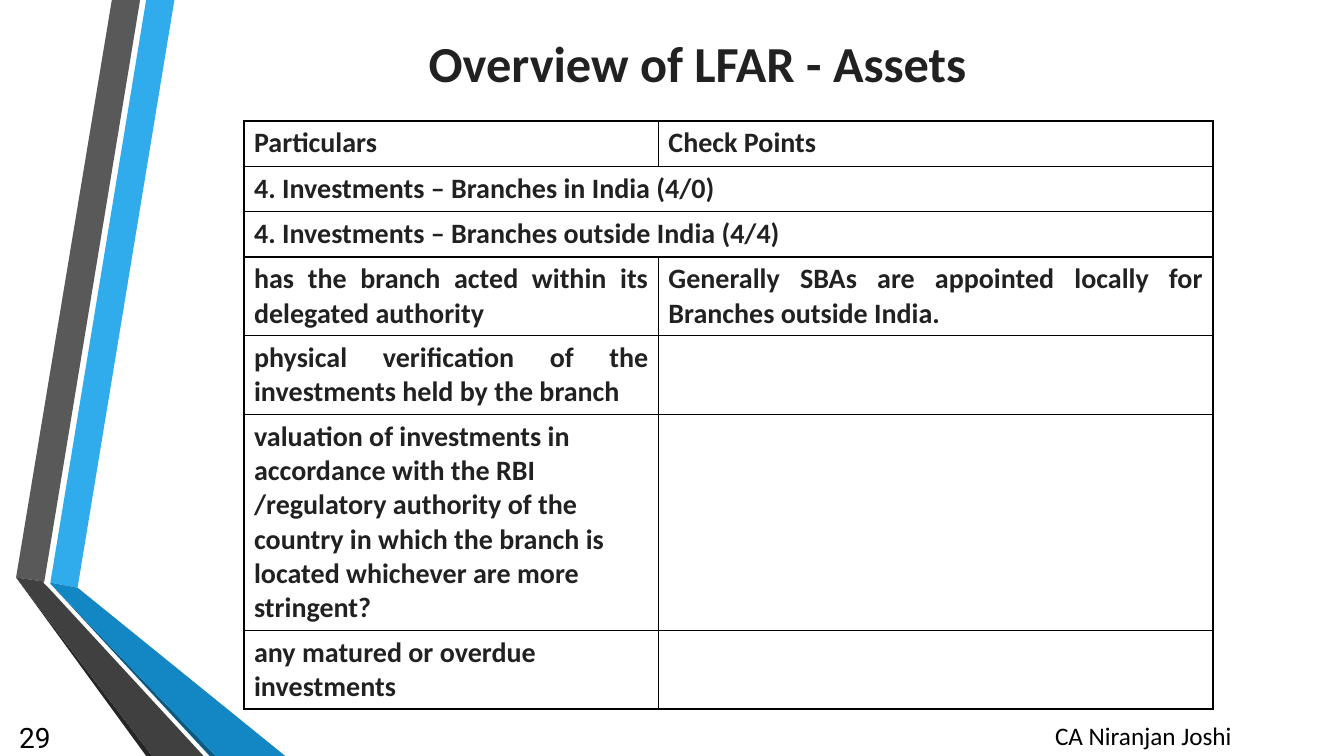
from lxml.etree import SubElement as Sub
from pptx import Presentation
from pptx.dml.color import RGBColor
from pptx.enum.text import MSO_ANCHOR as Anchor, PP_ALIGN as Align
from pptx.oxml.ns import qn
from pptx.util import Inches, Pt


def color(text):
    return RGBColor.from_string(text)


def write(frame, text, size=20, font="Calibri", hue="212121", bold=True,
          align=Align.LEFT, anchor=Anchor.TOP, hang=0):
    frame.word_wrap = True
    frame.vertical_anchor = anchor
    para = frame.paragraphs[0]
    para.alignment = align
    if hang:
        props = para._p.get_or_add_pPr()
        props.set("marL", str(Inches(hang)))
        props.set("indent", str(-Inches(hang)))
    para.font.size = Pt(size)
    run = para.add_run()
    run.text = text
    run.font.size = Pt(size)
    run.font.name = font
    run.font.bold = bold
    run.font.color.rgb = color(hue)


deck = Presentation()
deck.slide_width, deck.slide_height = Inches(13.33), Inches(7.5)
slide = deck.slides.add_slide(deck.slide_layouts[5])
shapes = slide.shapes

bands = [
    ("30ACEC", [(0.5, 5.78), (0.77, 5.83), (1.73, 0), (1.45, 0)]),
    ("595959", [(1.39, 0), (1.11, 0), (0.16, 5.73), (0.44, 5.77)]),
    ("262626", [(0.16, 5.73), (1.45, 7.5), (1.51, 7.5)]),
    ("0C5A82", [(0.5, 5.79), (2.08, 7.5), (2.14, 7.5)]),
    ("1287C3", [(0.5, 5.79), (2.14, 7.5), (2.83, 7.5), (0.77, 5.83), (0.5, 5.78)]),
    ("404040", [(2.02, 7.5), (0.48, 5.83), (0.43, 5.78), (0.44, 5.77),
                (0.16, 5.73), (1.51, 7.5)]),
]
for hue, points in bands:
    spots = [(Inches(x), Inches(y)) for x, y in points]
    pen = shapes.build_freeform(*spots[0])
    pen.add_line_segments(spots[1:], close=True)
    band = pen.convert_to_shape()
    band.shadow.inherit = False
    band.fill.solid()
    band.fill.fore_color.rgb = color(hue)
    band.line.fill.background()

title = shapes.title
title.left, title.top = Inches(2.42), Inches(0.25)
title.width, title.height = Inches(9), Inches(0.74)
write(title.text_frame, "Overview of LFAR - Assets", size=36,
      align=Align.CENTER, anchor=Anchor.MIDDLE)

rows = [
    (0.45, Align.LEFT, "Particulars", "Check Points"),
    (0.45, Align.LEFT, "4. Investments – Branches in India (4/0)", None),
    (0.45, Align.LEFT, "4. Investments – Branches outside India (4/4)", None),
    (0.78, Align.JUSTIFY, "has the branch acted within its delegated authority",
     "Generally SBAs are appointed locally for Branches outside India. "),
    (0.78, Align.JUSTIFY,
     "physical verification of the investments held by the branch", ""),
    (2.13, Align.LEFT, "valuation of investments in accordance with the RBI "
     "/regulatory authority of the country in which the branch is located "
     "whichever are more stringent?", ""),
    (0.78, Align.LEFT, "any matured or overdue investments", ""),
]
widths = [4.11, 5.5]
high = sum(row[0] for row in rows)
table = shapes.add_table(len(rows), len(widths), Inches(2.42), Inches(1.2),
                         Inches(sum(widths)), Inches(high)).table
table.first_row = table.horz_banding = False
for col, width in zip(table.columns, widths):
    col.width = Inches(width)

for r, (height, align, *texts) in enumerate(rows):
    table.rows[r].height = Inches(height)
    wide = texts[1] is None
    if wide:
        table.cell(r, 0).merge(table.cell(r, 1))
    for c, text in enumerate(texts):
        cell = table.cell(r, c)
        props = cell._tc.get_or_add_tcPr()
        for side in ("lnL", "lnR", "lnT", "lnB"):
            edge = Sub(props, qn("a:" + side), w=str(Pt(1)))
            paint = Sub(edge, qn("a:solidFill"))
            Sub(paint, qn("a:srgbClr"), val="000000")
        cell.fill.solid()
        cell.fill.fore_color.rgb = color("FFFFFF")
        if text:
            write(cell.text_frame, text, align=align, hang=0.44 if wide else 0)

notes = [
    (9.59, 7.1, 3.5, "CA Niranjan Joshi",
     dict(size=18, align=Align.CENTER)),
    (0, 7.11, 0.6, "29",
     dict(size=20, font="Roboto", align=Align.RIGHT, anchor=Anchor.MIDDLE)),
]
for left, top, width, text, style in notes:
    box = shapes.add_textbox(Inches(left), Inches(top), Inches(width), Inches(0.4))
    write(box.text_frame, text, hue="000000", bold=False, **style)

deck.save("out.pptx")
